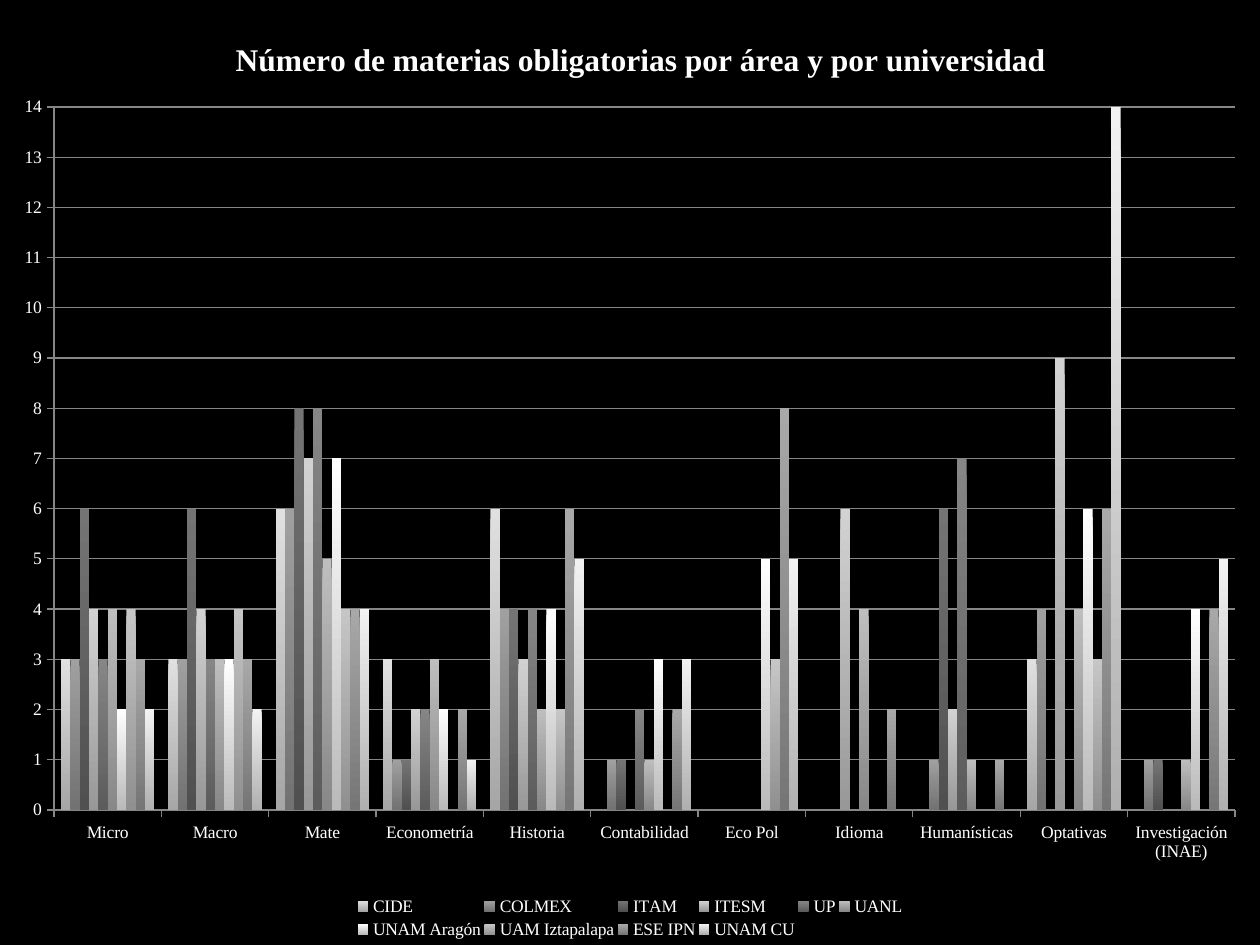
import pptx
import pptx.chart.data
import pptx.dml.color
import pptx.enum.chart
import pptx.util
from lxml import etree

PX = 914400 // 126
WIDTH, HEIGHT = 1260, 945
FONT = "Times New Roman"
COLORS = {"background": "000000", "text": "FFFFFF", "line": "868686"}
TITLE = "Número de materias obligatorias por área y por universidad"
AREAS = ["Micro", "Macro", "Mate", "Econometría", "Historia", "Contabilidad",
         "Eco Pol", "Idioma", "Humanísticas", "Optativas", "Investigación (INAE)"]
UNIVERSITIES = [
    ("CIDE", [3, 3, 6, 3, 6, 0, 0, 0, 0, 3, 0], "E0E0E0", "A6A6A6"),
    ("COLMEX", [3, 3, 6, 1, 4, 1, 0, 0, 1, 4, 1], "A0A0A0", "727272"),
    ("ITAM", [6, 6, 8, 1, 4, 1, 0, 0, 6, 0, 1], "747474", "505050"),
    ("ITESM", [4, 4, 7, 2, 3, 0, 0, 6, 2, 9, 0], "D2D2D2", "989898"),
    ("UP", [3, 3, 8, 2, 4, 2, 0, 0, 7, 0, 0], "868686", "5C5C5C"),
    ("UANL", [4, 3, 5, 3, 2, 1, 0, 4, 1, 4, 1], "BEBEBE", "888888"),
    ("UNAM Aragón", [2, 3, 7, 2, 4, 3, 5, 0, 0, 6, 4], "FFFFFF", "BABABA"),
    ("UAM Iztapalapa", [4, 4, 4, 0, 2, 0, 3, 0, 0, 3, 0], "C6C6C6", "909090"),
    ("ESE IPN", [3, 3, 4, 2, 6, 2, 8, 2, 1, 6, 4], "A8A8A8", "767676"),
    ("UNAM CU", [2, 2, 4, 1, 5, 3, 5, 0, 0, 14, 5], "F2F2F2", "B0B0B0"),
]


def px(n):
    return pptx.util.Emu(n * PX)


def rgb(value):
    return pptx.dml.color.RGBColor.from_string(value)


def style_font(font, size, bold=False):
    font.name = FONT
    font.size = pptx.util.Pt(size)
    font.bold = bold
    font.color.rgb = rgb(COLORS["text"])


def style_line(line):
    line.color.rgb = rgb(COLORS["line"])
    line.width = pptx.util.Pt(0.75)


def place(element, x, y, w=None, h=None, inner=False):
    ns = element.nsmap["c"]
    for old in element.findall(f"{{{ns}}}layout"):
        element.remove(old)
    layout = etree.Element(f"{{{ns}}}layout")
    manual = etree.SubElement(layout, f"{{{ns}}}manualLayout")
    values = [("xMode", "edge"), ("yMode", "edge"),
              ("x", x / WIDTH), ("y", y / HEIGHT)]
    if inner:
        values.insert(0, ("layoutTarget", "inner"))
    if w:
        values += [("w", w / WIDTH), ("h", h / HEIGHT)]
    for tag, value in values:
        etree.SubElement(manual, f"{{{ns}}}{tag}", val=str(value))
    before = ("tx", "legendPos", "legendEntry")
    index = sum(etree.QName(child).localname in before for child in element)
    element.insert(index, layout)


def add_subject_chart(s):
    data = pptx.chart.data.CategoryChartData()
    data.categories = AREAS
    for name, values, _, _ in UNIVERSITIES:
        data.add_series(name, values)
    kind = pptx.enum.chart.XL_CHART_TYPE.COLUMN_CLUSTERED
    chart = s.shapes.add_chart(kind, 0, 0, px(WIDTH), px(HEIGHT), data).chart
    style_font(chart.font, 10)
    return chart


def style_title(chart):
    tf = chart.chart_title.text_frame
    tf.text = TITLE
    style_font(tf.paragraphs[0].font, 18, True)
    chart.chart_title.include_in_layout = True
    place(chart.chart_title._element, 230, 34)


def style_axes(chart):
    for axis in (chart.category_axis, chart.value_axis):
        axis.major_tick_mark = pptx.enum.chart.XL_TICK_MARK.OUTSIDE
        axis.minor_tick_mark = pptx.enum.chart.XL_TICK_MARK.NONE
        style_line(axis.format.line)
        style_font(axis.tick_labels.font, 10)
    axis = chart.value_axis
    axis.minimum_scale, axis.maximum_scale, axis.major_unit = 0, 14, 1
    axis.has_major_gridlines = True
    style_line(axis.major_gridlines.format.line)


def style_series(plot):
    plot.gap_width = 150
    plot.overlap = 0
    plot.vary_by_categories = False
    for series, (_, _, top, bottom) in zip(plot.series, UNIVERSITIES):
        series.invert_if_negative = False
        fill = series.format.fill
        fill.gradient()
        fill.gradient_angle = 270
        for stop, color in zip(fill.gradient_stops, (top, bottom)):
            stop.color.rgb = rgb(color)


def style_legend(chart):
    chart.has_legend = True
    legend = chart.legend
    legend.position = pptx.enum.chart.XL_LEGEND_POSITION.BOTTOM
    legend.include_in_layout = False
    style_font(legend.font, 10)
    place(legend._element, 354, 893, 552, 50)


def main():
    prs = pptx.Presentation()
    prs.slide_width, prs.slide_height = px(WIDTH), px(HEIGHT)
    s = prs.slides.add_slide(prs.slide_layouts[6])
    s.background.fill.solid()
    s.background.fill.fore_color.rgb = rgb(COLORS["background"])
    chart = add_subject_chart(s)
    style_title(chart)
    style_axes(chart)
    style_series(chart.plots[0])
    style_legend(chart)
    place(chart._chartSpace.chart.plotArea, 54, 107, 1181, 703, inner=True)
    prs.save("out.pptx")


if __name__ == "__main__":
    main()
